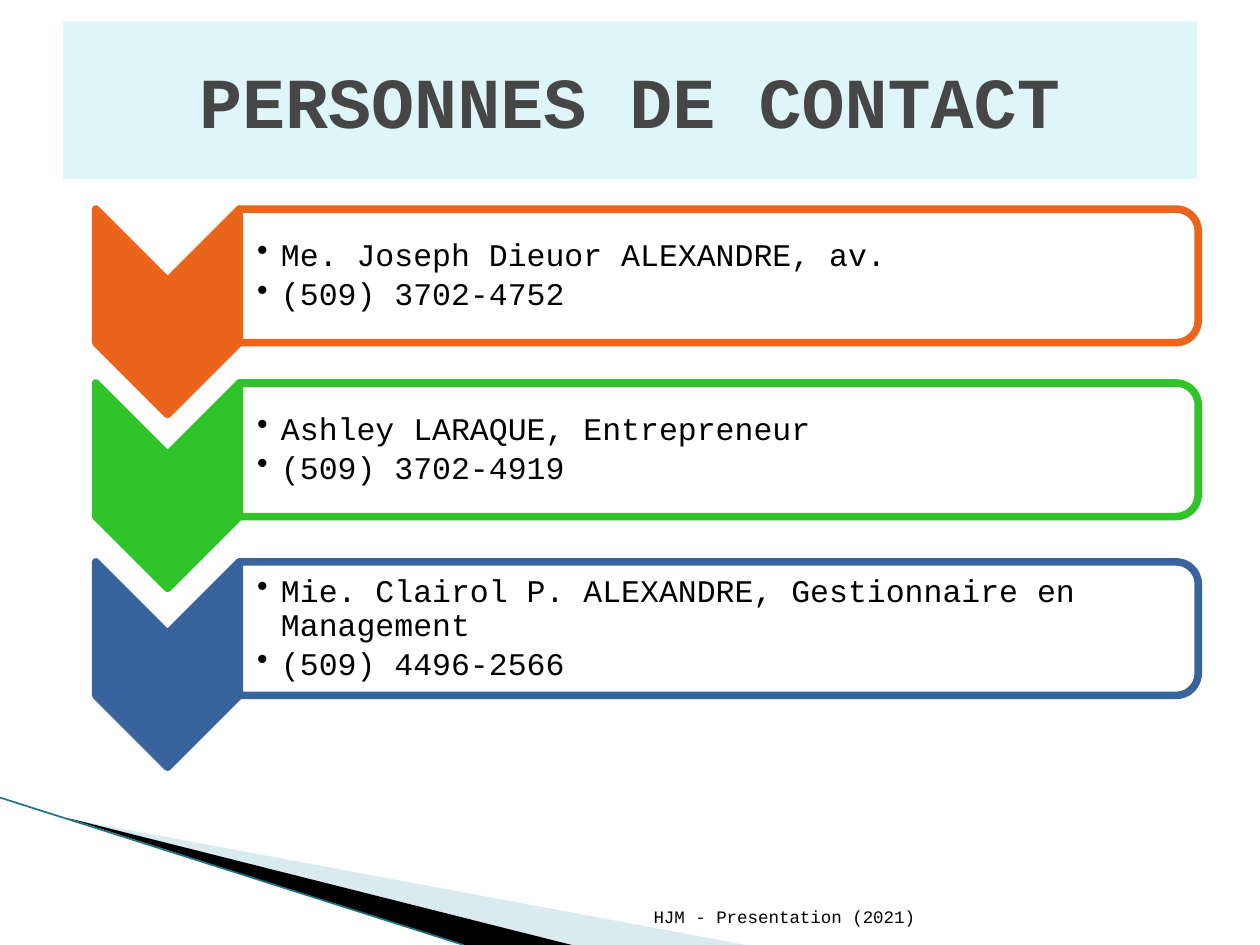
from lxml import etree
from pptx import Presentation
from pptx.dml.color import RGBColor
from pptx.enum.shapes import MSO_CONNECTOR, MSO_SHAPE
from pptx.enum.text import MSO_ANCHOR, PP_ALIGN
from pptx.oxml.ns import qn
from pptx.util import Inches, Pt

CHEVRON, PANEL = MSO_SHAPE.CHEVRON, MSO_SHAPE.ROUND_2_SAME_RECTANGLE
MIDDLE, BOTTOM = MSO_ANCHOR.MIDDLE, MSO_ANCHOR.BOTTOM
CENTER, RIGHT = PP_ALIGN.CENTER, PP_ALIGN.RIGHT
FONT = "Courier New"
WHITE = RGBColor(0xFF, 0xFF, 0xFF)
BLACK = RGBColor(0x00, 0x00, 0x00)
GREY = RGBColor(0x46, 0x46, 0x46)
PALE_CYAN = RGBColor(0xDE, 0xF5, 0xFA)
LIGHT_BLUE = RGBColor(0xA0, 0xCB, 0xDC)
TEAL = RGBColor(0x1B, 0x75, 0x87)
ORANGE = RGBColor(0xEB, 0x64, 0x1B)
GREEN = RGBColor(0x2F, 0xC5, 0x29)
BLUE = RGBColor(0x39, 0x63, 0x9D)


def paint(shape, color, opacity=100):
    """Fill a shape without shadow, at an opacity in percent."""
    shape.shadow.inherit = False
    shape.fill.solid()
    shape.fill.fore_color.rgb = color
    if opacity < 100:
        color_element = shape.fill._xPr.find(qn("a:solidFill"))[0]
        etree.SubElement(color_element, qn("a:alpha"), val=str(opacity * 1000))


def set_font(para, size, color, bold=False):
    para.font.name = FONT
    para.font.size = Pt(size)
    para.font.bold = bold
    para.font.color.rgb = color


deck = Presentation()
deck.slide_width, deck.slide_height = Inches(10), Inches(7.5)
page = deck.slides.add_slide(deck.slide_layouts[5])

# Corner decoration
WEDGES = [
    (LIGHT_BLUE, 40, [(0.55, 6.5), (5.92, 7.5), (4.55, 7.5)]),
    (BLACK, 100, [(0.53, 6.49), (4.54, 7.5), (3.68, 7.5)]),
]
for color, opacity, points in WEDGES:
    corners = [(Inches(x), Inches(y)) for x, y in points]
    builder = page.shapes.build_freeform(*corners[0])
    builder.add_line_segments(corners[1:], close=True)
    wedge = builder.convert_to_shape()
    paint(wedge, color, opacity)
    wedge.line.fill.background()

edge = page.shapes.add_connector(
    MSO_CONNECTOR.STRAIGHT, 0, Inches(6.33), Inches(3.68), Inches(7.5))
edge.line.color.rgb = TEAL
edge.line.width = Pt(0.95)
etree.SubElement(edge._element.spPr, qn("a:effectLst"))

# Title
title = page.shapes.title
title.left, title.top = Inches(0.5), Inches(0.17)
title.width, title.height = Inches(9), Inches(1.25)
paint(title, PALE_CYAN)
title.text_frame.text = "PERSONNES DE CONTACT"
title.text_frame.vertical_anchor = MIDDLE
title.text_frame.paragraphs[0].alignment = CENTER
set_font(title.text_frame.paragraphs[0], 41, GREY, bold=True)

# Contacts: a downward chevron and a panel rounded on the right in each row
CHEVRON_LEFT, CHEVRON_WIDTH, CHEVRON_HEIGHT = 0.76, 1.14, 1.63
PANEL_LEFT, PANEL_WIDTH, PANEL_HEIGHT = 1.9, 7.61, 1.06
CONTACTS = [
    (1.66, ORANGE, ["Me. Joseph Dieuor ALEXANDRE, av.", "(509) 3702-4752"]),
    (3.04, GREEN, ["Ashley LARAQUE, Entrepreneur", "(509) 3702-4919"]),
    (4.46, BLUE, ["Mie. Clairol P. ALEXANDRE, Gestionnaire en Management",
                  "(509) 4496-2566"]),
]
for top, color, lines in CONTACTS:
    parts = [
        (CHEVRON, CHEVRON_LEFT, CHEVRON_WIDTH, CHEVRON_HEIGHT, color, 100),
        (PANEL, PANEL_LEFT, PANEL_WIDTH, PANEL_HEIGHT, WHITE, 90),
    ]
    for kind, left, width, height, fill, opacity in parts:
        # A quarter turn swaps width and height about the centre
        shift = (width - height) / 2
        shape = page.shapes.add_shape(
            kind, Inches(left + shift), Inches(top - shift),
            Inches(height), Inches(width))
        shape.rotation = 90
        paint(shape, fill, opacity)
        shape.line.color.rgb = color
        shape.line.width = Pt(4.33)

    box = page.shapes.add_textbox(
        Inches(PANEL_LEFT), Inches(top + 0.05), Inches(7.56), Inches(0.96))
    frame = box.text_frame
    frame.word_wrap = True
    frame.vertical_anchor = MIDDLE
    frame.margin_left = Inches(0.14)
    frame.margin_top = frame.margin_right = frame.margin_bottom = Inches(0.01)
    frame.text = "\n".join(lines)
    for para in frame.paragraphs:
        properties = para._p.get_or_add_pPr()
        properties.set("marL", str(Inches(0.19)))
        properties.set("indent", str(-Inches(0.19)))
        etree.SubElement(properties, qn("a:buChar"), char="•")
        para.line_spacing = 0.9
        para.space_after = Pt(3)
        set_font(para, 18, BLACK)

# Footer
footer = page.shapes.add_textbox(
    Inches(4.79), Inches(7.01), Inches(2.57), Inches(0.4))
footer.text_frame.word_wrap = True
footer.text_frame.vertical_anchor = BOTTOM
footer.text_frame.text = "HJM - Presentation (2021)"
footer.text_frame.paragraphs[0].alignment = RIGHT
set_font(footer.text_frame.paragraphs[0], 10, BLACK)

deck.save("out.pptx")
